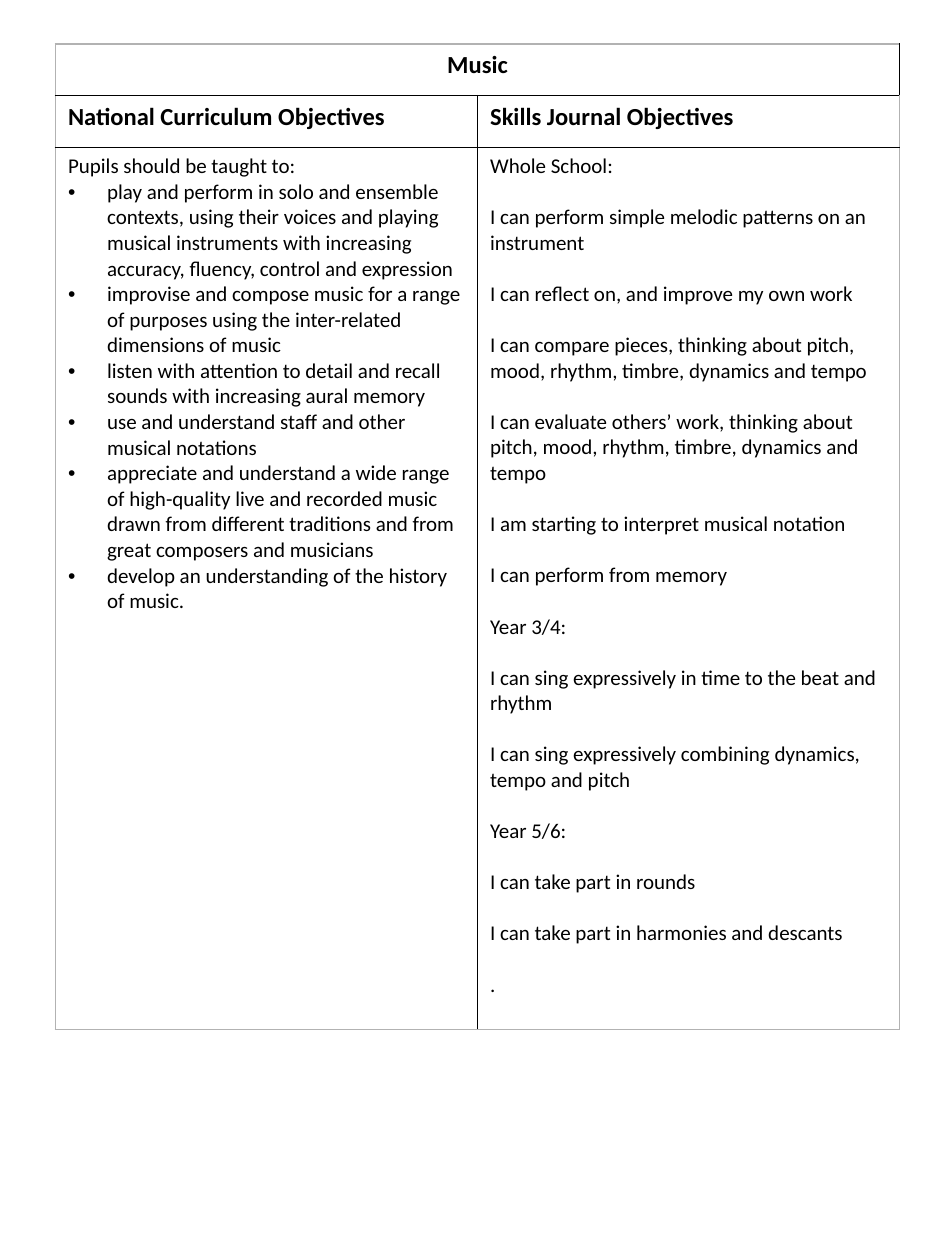
from pptx import Presentation, util as u
from pptx.dml.color import RGBColor
from pptx.enum import text
from pptx.oxml.ns import qn
from lxml import etree

CURRICULUM = [
    "play and perform in solo and ensemble contexts, using their voices and playing musical "
    "instruments with increasing accuracy, fluency, control and expression",
    "improvise and compose music for a range of purposes using the inter-related dimensions of music",
    "listen with attention to detail and recall sounds with increasing aural memory",
    "use and understand staff and other musical notations",
    "appreciate and understand a wide range of high-quality live and recorded music drawn from "
    "different traditions and from great composers and musicians",
    "develop an understanding of the history of music.",
]
SKILLS = [
    "Whole School:",
    "I can perform simple melodic patterns on an instrument",
    "I can reflect on, and improve my own work",
    "I can compare pieces, thinking about pitch, mood, rhythm, timbre, dynamics and tempo",
    "I can evaluate others’ work, thinking about pitch, mood, rhythm, timbre, dynamics and tempo",
    "I am starting to interpret musical notation",
    "I can perform from memory",
    "Year 3/4:",
    "I can sing expressively in time to the beat and rhythm\u00a0",
    "I can sing expressively combining dynamics, tempo and pitch",
    "Year 5/6:",
    "I can take part in rounds",
    "I can take part in harmonies and descants",
    ".",
]
HEADING = {"size": u.Pt(14), "bold": True}
BODY = {"size": u.Pt(12), "bold": False}
INNER, OUTER = "000000", "B2B2B2"


def color(value):
    return RGBColor.from_string(value)


class ObjectivesPage:
    font = "Calibri"
    ink = "000000"
    paper = "FFFFFF"

    def __init__(self, slide):
        self.slide = slide

    def table(self, left, top, widths, heights):
        grid = self.slide.shapes.add_table(
            len(heights), len(widths), u.Inches(left), u.Inches(top),
            u.Inches(sum(widths)), u.Inches(sum(heights))).table
        grid.first_row = grid.horz_banding = False
        for column, width in zip(grid.columns, widths):
            column.width = u.Inches(width)
        for row, height in zip(grid.rows, heights):
            row.height = u.Inches(height)
        last_row, last_column = len(heights) - 1, len(widths) - 1
        for r in range(len(heights)):
            for c in range(len(widths)):
                cell = grid.cell(r, c)
                self.borders(cell, {"L": c == 0, "R": c == last_column,
                                    "T": r == 0, "B": r == last_row})
                cell.fill.solid()
                cell.fill.fore_color.rgb = color(self.paper)
        return grid

    def borders(self, cell, outer_sides):
        properties = cell._tc.get_or_add_tcPr()
        for side, is_outer in outer_sides.items():
            line = etree.SubElement(properties, qn(f"a:ln{side}"), w=str(u.Pt(1)))
            fill = etree.SubElement(line, qn("a:solidFill"))
            etree.SubElement(fill, qn("a:srgbClr"), val=OUTER if is_outer else INNER)

    def paragraphs(self, cell, lines, style, align=text.PP_ALIGN.LEFT, gap=0):
        """Add lines to the cell, reusing its first paragraph while that is empty."""
        frame = cell.text_frame
        added = []
        for line in lines:
            paragraph = frame.add_paragraph() if frame.text else frame.paragraphs[0]
            paragraph.alignment = align
            paragraph.space_after = u.Pt(gap)
            run = paragraph.add_run()
            run.text = line
            for name, value in {"name": self.font, **style}.items():
                setattr(run.font, name, value)
            run.font.color.rgb = color(self.ink)
            added.append(paragraph)
        return added

    def bullets(self, cell, lines, style):
        indent = u.Inches(0.31)
        for paragraph in self.paragraphs(cell, lines, style):
            properties = paragraph._p.get_or_add_pPr()
            properties.set("marL", str(indent))
            properties.set("indent", str(-indent))
            etree.SubElement(properties, qn("a:buFont"), typeface="Arial")
            etree.SubElement(properties, qn("a:buChar"), char="•")


def main():
    deck = Presentation()
    deck.slide_width, deck.slide_height = u.Inches(7.5), u.Inches(10)
    page = ObjectivesPage(deck.slides.add_slide(deck.slide_layouts[6]))

    objectives = page.table(0.44, 0.35, [3.35] * 2, [0.41, 0.41, 7])
    subject = objectives.cell(0, 0)
    subject.merge(objectives.cell(0, 1))
    page.paragraphs(subject, ["Music"], HEADING, text.PP_ALIGN.CENTER)
    for column, heading in enumerate(["National Curriculum Objectives", "Skills Journal Objectives"]):
        page.paragraphs(objectives.cell(1, column), [heading], HEADING)

    curriculum = objectives.cell(2, 0)
    page.paragraphs(curriculum, ["Pupils should be taught to:"], BODY)
    page.bullets(curriculum, CURRICULUM, BODY)
    page.paragraphs(objectives.cell(2, 1), SKILLS, BODY, gap=14.6)
    deck.save("out.pptx")


if __name__ == "__main__":
    main()
